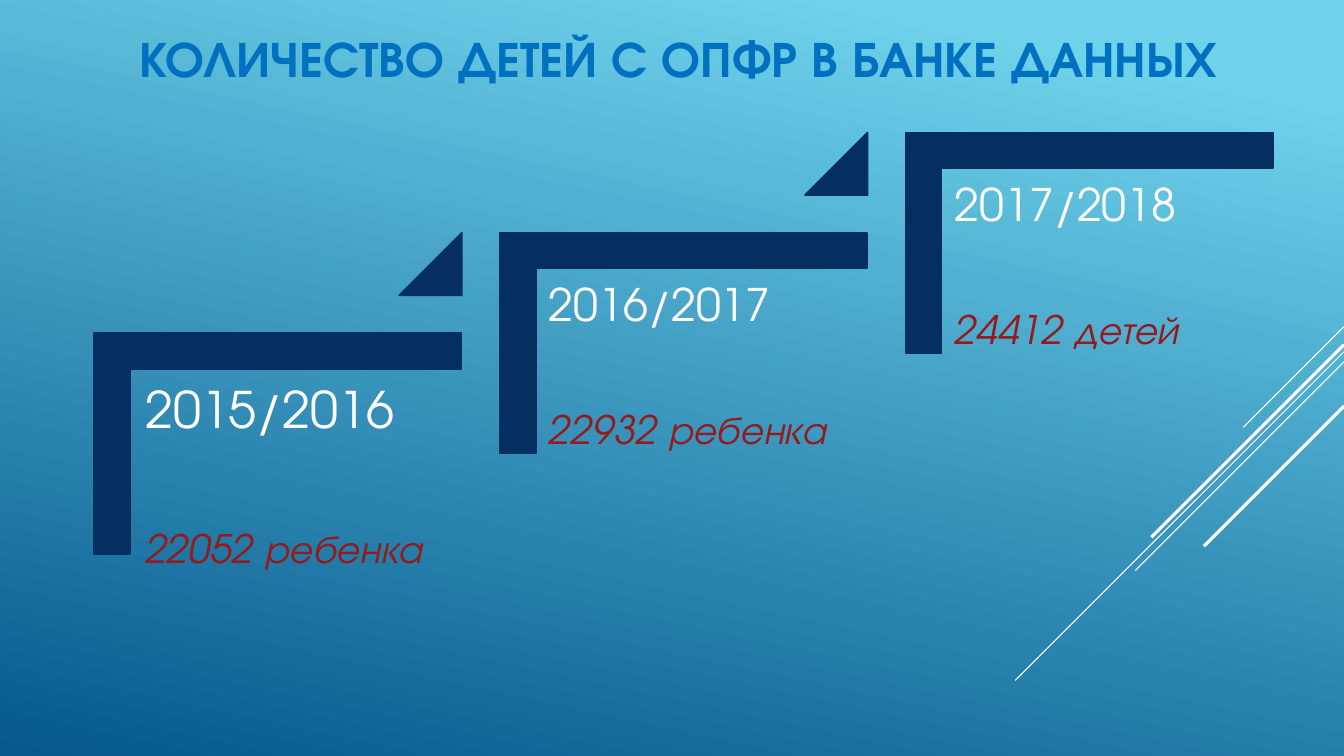
from dataclasses import dataclass

from lxml import etree
from pptx import Presentation
from pptx.dml.color import RGBColor
from pptx.enum.shapes import MSO_CONNECTOR, MSO_SHAPE
from pptx.enum.text import MSO_ANCHOR, PP_ALIGN
from pptx.oxml.ns import qn
from pptx.util import Inches, Pt

STRAIGHT = MSO_CONNECTOR.STRAIGHT
CORNER = MSO_SHAPE.CORNER
TRIANGLE = MSO_SHAPE.ISOSCELES_TRIANGLE
CENTER = PP_ALIGN.CENTER
MIDDLE = MSO_ANCHOR.MIDDLE


@dataclass(frozen=True)
class Theme:
    font: str = "TeX Gyre Adventor"
    sky: RGBColor = RGBColor.from_string("6ED2EB")
    deep: RGBColor = RGBColor.from_string("06588E")
    white: RGBColor = RGBColor.from_string("FFFFFF")
    title: RGBColor = RGBColor.from_string("0070C0")
    navy: RGBColor = RGBColor.from_string("052F61")
    red: RGBColor = RGBColor.from_string("941A1B")
    title_size: int = 36
    count_size: int = 28


THEME = Theme()
SLIDE_WIDTH = 13.33

# Diagonal rays: start height at the right edge, horizontal run, weight
RAYS = [
    (3.24, 1.0, 0.75),
    (3.49, 3.26, 0.75),
    (3.59, 2.07, 0.75),
    (3.42, 1.91, 2.25),
    (4.03, 1.39, 2.25),
]

# School year, its type size, number of children, text inset
STEPS = [
    ("2015/2016", 36, "22052 ребенка", 0.15),
    ("2016/2017", 32, "22932 ребенка", 0.13),
    ("2017/2018", 32, "24412 детей", 0.13),
]
STEP_RIGHT, STEP_UP = 4.025, 0.995


def paint_background(slide):
    fill = slide.background.fill
    fill.gradient()
    fill.gradient_angle = 360 - 102
    stops = zip(fill.gradient_stops, [(0.1, THEME.sky), (1.0, THEME.deep)])
    for stop, (position, color) in stops:
        stop.position = position
        stop.color.rgb = color


def add_ray(slide, top, run, weight):
    ray = slide.shapes.add_connector(
        STRAIGHT, Inches(SLIDE_WIDTH), Inches(top),
        Inches(SLIDE_WIDTH - run), Inches(top + run))
    ray.line.color.rgb = THEME.white
    ray.line.width = Pt(weight)
    etree.SubElement(ray._element.spPr, qn("a:effectLst"))


def add_navy_shape(slide, kind, left, top, width, height, adjustments):
    shape = slide.shapes.add_shape(
        kind, Inches(left), Inches(top), Inches(width), Inches(height))
    shape.shadow.inherit = False
    shape.fill.solid()
    shape.fill.fore_color.rgb = THEME.navy
    shape.line.color.rgb = THEME.navy
    shape.line.width = Pt(1.25)
    for index, value in enumerate(adjustments):
        shape.adjustments[index] = value
    return shape


def add_text_frame(slide, left, top, width, height):
    frame = slide.shapes.add_textbox(
        Inches(left), Inches(top), Inches(width), Inches(height)).text_frame
    frame.word_wrap = True
    return frame


def write(paragraph, text, size, color, bold=False, italic=False):
    paragraph.text = text
    font = paragraph.font
    font.name, font.size = THEME.font, Pt(size)
    font.bold, font.italic = bold, italic
    font.color.rgb = color


def add_title(slide, text):
    frame = add_text_frame(slide, 0.75, 0.1, 11.95, 0.93)
    frame.vertical_anchor = MIDDLE
    heading = frame.paragraphs[0]
    heading.alignment = CENTER
    write(heading, text, THEME.title_size, THEME.title, bold=True)


def add_step(slide, index, year, year_size, count, inset):
    right, up = index * STEP_RIGHT, index * STEP_UP
    bracket = add_navy_shape(
        slide, CORNER, 1.66 + right, 2.58 - up, 2.19, 3.64, (0.161, 0.161))
    bracket.rotation = 90

    frame = add_text_frame(slide, 1.29 + right, 3.67 - up, 3.29, 2.88)
    frame.margin_left = frame.margin_right = Inches(inset)
    frame.margin_top = frame.margin_bottom = Inches(inset)
    year_line, count_line = frame.paragraphs[0], frame.add_paragraph()
    write(year_line, year, year_size, THEME.white)
    write(count_line, count, THEME.count_size, THEME.red, italic=True)
    year_line.line_spacing = count_line.line_spacing = 0.9
    count_line.space_before = Pt(round(1.78 * year_size))

    # Triangle leading up to the next step
    if index < len(STEPS) - 1:
        add_navy_shape(
            slide, TRIANGLE, 3.96 + right, 2.31 - up, 0.62, 0.62, (1,))


def main():
    deck = Presentation()
    deck.slide_width, deck.slide_height = Inches(SLIDE_WIDTH), Inches(7.5)
    slide = deck.slides.add_slide(deck.slide_layouts[6])

    # Backdrop
    paint_background(slide)
    for ray in RAYS:
        add_ray(slide, *ray)

    # Title and rising steps
    add_title(slide, "КОЛИЧЕСТВО ДЕТЕЙ С ОПФР В БАНКЕ ДАННЫХ")
    for index, step in enumerate(STEPS):
        add_step(slide, index, *step)

    deck.save("out.pptx")


if __name__ == "__main__":
    main()
